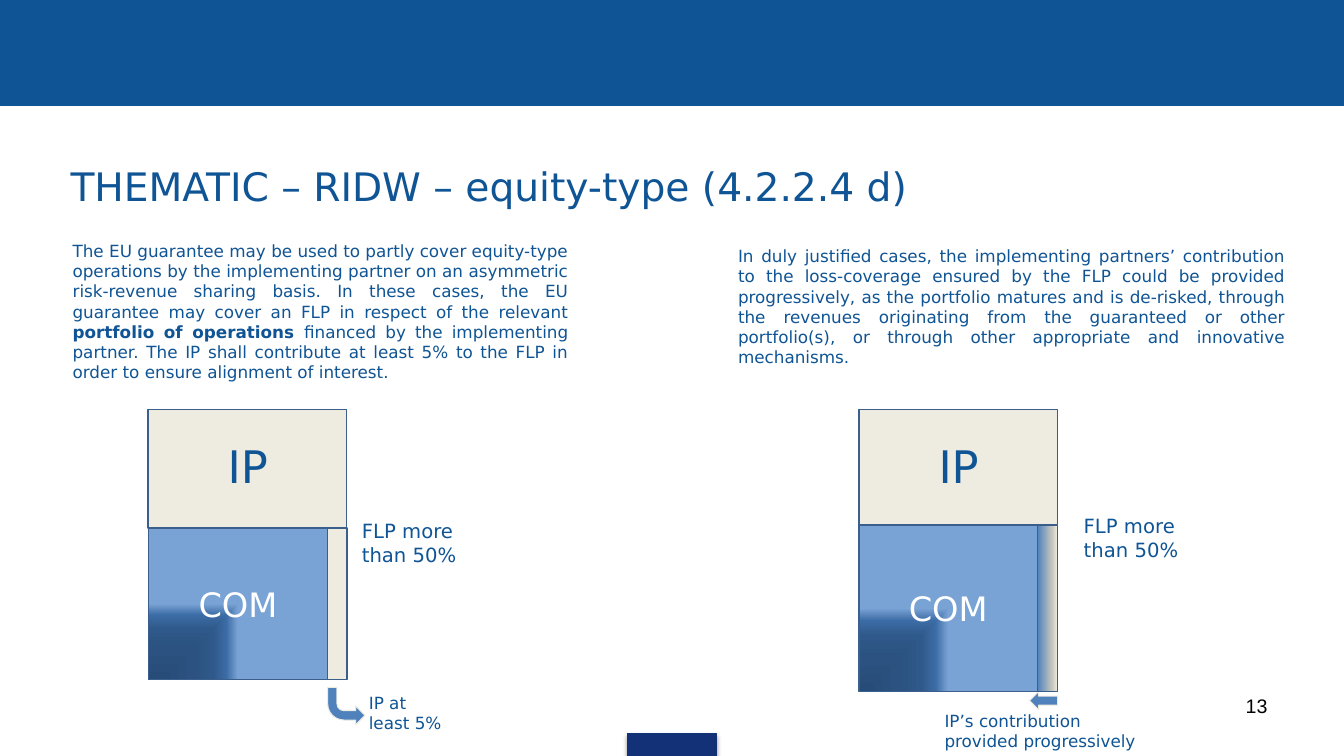
from lxml.etree import SubElement, fromstring
from pptx import Presentation
from pptx.dml.color import RGBColor
from pptx.enum.shapes import MSO_SHAPE as Shape
from pptx.enum.text import MSO_ANCHOR as Anchor, MSO_AUTO_SIZE as AutoSize, PP_ALIGN as Align
from pptx.oxml.ns import qn
from pptx.util import Pt

PX = 9144  # 100 px to the inch
NS = "http://schemas.openxmlformats.org/drawingml/2006/main"
COLORS = {
    "blue": "0F5494", "navy": "133176", "cream": "EEECE1", "outline": "3A5F8C",
    "edge": "385D8A", "arrow": "4F81BD", "white": "FFFFFF", "black": "000000",
}
COM_STOPS = [(0, "284C78"), (41, "2B5280"), (67, "2F598A"), (85, "3C6CA6"), (100, "79A3D5")]
COM_FILL = '<a:path path="rect"><a:fillToRect t="100000" r="100000"/></a:path>'
STRIP_STOPS = [(0, "4F81BD"), (74, "C9C7BD"), (100, "EFEDE0")]
STRIP_FILL = '<a:lin ang="0" scaled="0"/>'


def rgb(name):
    return RGBColor.from_string(COLORS[name])


class SlideBuilder:
    """Holds the style and the current slide."""
    font = "DejaVu Sans"

    def __init__(self, page):
        self.page = page

    def add_spans(self, frame, spans, size, color="blue", align=Align.LEFT,
                  anchor=Anchor.TOP, font=None):
        frame.word_wrap = True
        frame.auto_size = AutoSize.NONE
        frame.vertical_anchor = anchor
        para = frame.paragraphs[0]
        para.alignment = align
        for words, bold in spans:
            span = para.add_run()
            span.text = words
            span.font.name = font or self.font
            span.font.size = Pt(size)
            span.font.bold = bold
            span.font.color.rgb = rgb(color)
        return para

    def text(self, place, words, size, **style):
        box = self.page.shapes.add_textbox(*(n * PX for n in place))
        self.add_spans(box.text_frame, [(words, False)], size, **style)

    def placeholder(self, index, place, spans, size, **style):
        holder = self.page.placeholders[index]
        holder.left, holder.top, holder.width, holder.height = (n * PX for n in place)
        self.page.shapes._spTree.append(holder._element)
        para = self.add_spans(holder.text_frame, spans, size, **style)
        para.space_before = Pt(0)
        properties = para._p.get_or_add_pPr()
        properties.set("marL", "0")
        properties.set("indent", "0")
        SubElement(properties, qn("a:buNone"))

    def shape(self, place, fill=None, line="outline", weight=1, kind=Shape.RECTANGLE):
        shape = self.page.shapes.add_shape(kind, *(n * PX for n in place))
        shape.shadow.inherit = False
        if fill:
            shape.fill.solid()
            shape.fill.fore_color.rgb = rgb(fill)
        shape.line.color.rgb = rgb(line)
        shape.line.width = Pt(weight)
        return shape

    def gradient(self, place, stops, direction, **style):
        shape = self.shape(place, **style)
        marks = "".join(f'<a:gs pos="{at * 1000}"><a:srgbClr val="{color}"/></a:gs>'
                        for at, color in stops)
        shape._element.spPr.find(qn("a:prstGeom")).addnext(fromstring(
            f'<a:gradFill xmlns:a="{NS}" rotWithShape="1"><a:gsLst>{marks}</a:gsLst>'
            f'{direction}</a:gradFill>'))
        return shape

    def drop_shadow(self, shape):
        effects = shape._element.spPr.find(qn("a:effectLst"))
        effects.append(fromstring(
            f'<a:outerShdw xmlns:a="{NS}" blurRad="{Pt(3.1)}" dist="{Pt(1.8)}" dir="5400000">'
            f'<a:srgbClr val="{COLORS["black"]}"><a:alpha val="35000"/></a:srgbClr>'
            '</a:outerShdw>'))

    def partner_block(self, left, height):
        self.shape((left, 406, 197, height), "cream")
        self.text((left + 69, 430, 69, 64), "IP", 32)

    def commission_block(self, place):
        block = self.gradient(place, COM_STOPS, COM_FILL)
        self.add_spans(block.text_frame, [("COM", False)], 24, color="white",
                       align=Align.CENTER, anchor=Anchor.MIDDLE)


def main():
    deck = Presentation()
    deck.slide_width, deck.slide_height = 1333 * PX, 750 * PX
    page = deck.slides.add_slide(deck.slide_layouts.get_by_name("Two Content"))
    build = SlideBuilder(page)

    # Header band and footer tab
    build.shape((0, 0, 1333, 105), "blue", "blue", 0.75)
    build.drop_shadow(build.shape((622, 728, 89, 22), "navy", "navy", 0.75))

    # Title and the two paragraphs
    build.placeholder(0, (60, 156, 953, 57),
                      [("THEMATIC – RIDW – equity-type (4.2.2.4 d)", False)], 28)
    build.placeholder(1, (62, 233, 512, 151), [
        ("The EU guarantee may be used to partly cover equity-type operations by the "
         "implementing partner on an asymmetric risk-revenue sharing basis. In these cases, "
         "the EU guarantee may cover an FLP in respect of the relevant ", False),
        ("portfolio of operations ", True),
        ("financed by the implementing partner. The IP shall contribute at least 5% to the "
         "FLP in order to ensure alignment of interest.", False),
    ], 12, align=Align.JUSTIFY, anchor=Anchor.BOTTOM)
    build.placeholder(2, (722, 239, 563, 131), [
        ("In duly justified cases, the implementing partners’ contribution to the "
         "loss-coverage ensured by the FLP could be provided progressively, as the portfolio "
         "matures and is de-risked, through the revenues originating from the guaranteed or "
         "other portfolio(s), or through other appropriate and innovative mechanisms.", False),
    ], 12, align=Align.JUSTIFY)
    build.text((956, 683, 311, 52), "13", 14, color="black", align=Align.RIGHT, font="Arial")

    # Left diagram: fixed partner share
    build.shape((325, 524, 19, 150), "cream")
    build.partner_block(147, 118)
    bent = build.shape((325, 682, 37, 37), "arrow", "cream", 0.75, Shape.BENT_ARROW)
    bent._element.spPr.find(qn("a:xfrm")).set("flipV", "1")
    build.text((356, 682, 98, 50), "IP at least 5%", 12)
    build.text((349, 510, 125, 57), "FLP more than 50%", 14)
    build.commission_block((147, 524, 178, 150))

    # Right diagram: progressive partner share
    build.partner_block(852, 115)
    arrow = build.shape((1021, 686, 28, 18), "arrow", "cream", 0.75, Shape.RIGHT_ARROW)
    arrow.rotation = 180
    build.text((927, 700, 216, 50), "IP’s contribution provided progressively", 12)
    build.gradient((1029, 521, 20, 165), STRIP_STOPS, STRIP_FILL, line="edge", weight=0.75)
    build.text((1065, 505, 125, 57), "FLP more than 50%", 14)
    build.commission_block((852, 521, 177, 165))

    deck.save("out.pptx")


if __name__ == "__main__":
    main()
